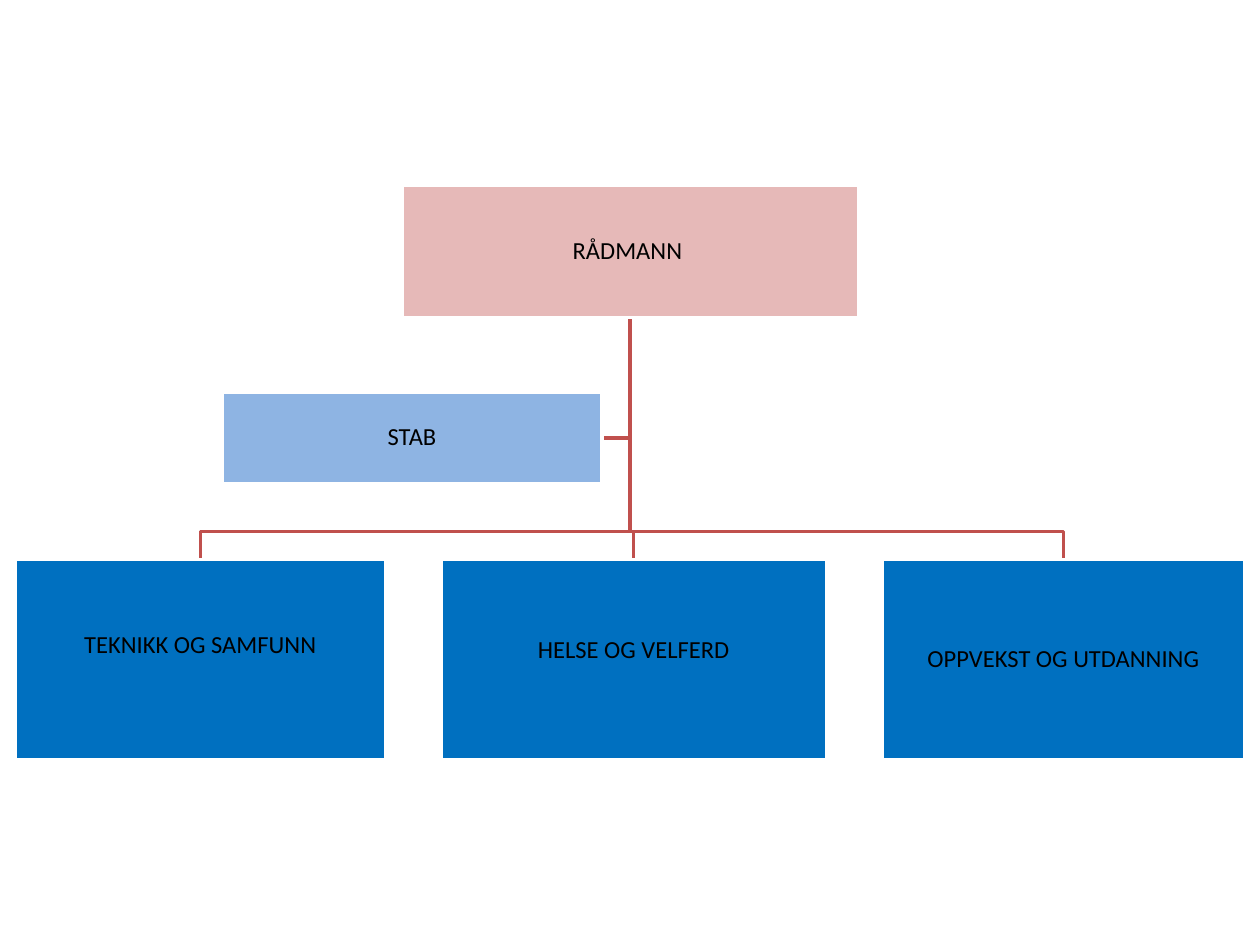
from pptx import Presentation
from pptx.dml.color import RGBColor as RGB
from pptx.enum.shapes import MSO_SHAPE as Shape
from pptx.enum.text import MSO_ANCHOR as Anchor, PP_ALIGN as Align
from pptx.util import Inches, Pt

WIDE, HIGH = Inches(10), Inches(7.5)
RED, WHITE, BLACK = "C0504D", "FFFFFF", "000000"
PINK, SKY, BLUE = "E6B9B8", "8EB4E3", "0070C0"
TRUNK, BUS = 50, 56.27
ROW, TALL = 59.2, 21.2


def col(share):
    return round(WIDE * share / 100)


def row(share):
    return round(HIGH * share / 100)


def tint(code):
    return RGB.from_string(code)


def edge(item, code):
    item.shadow.inherit = False
    item.line.color.rgb = tint(code)
    item.line.width = Pt(2)


def write(frame, text, size=14, font="Calibri", color=BLACK, right=0.01, low=0.01):
    frame.word_wrap = True
    frame.vertical_anchor = Anchor.MIDDLE
    frame.margin_left = frame.margin_top = Inches(0.01)
    frame.margin_right, frame.margin_bottom = Inches(right), Inches(low)
    para = frame.paragraphs[0]
    para.alignment = Align.CENTER
    para.line_spacing = 0.9
    run = para.add_run()
    run.text = text
    run.font.size = Pt(size)
    run.font.name = font
    run.font.color.rgb = tint(color)


def box(slide, text, left, top, wide, high, fill, **form):
    item = slide.shapes.add_shape(
        Shape.RECTANGLE, col(left), row(top), col(wide), row(high))
    item.fill.solid()
    item.fill.fore_color.rgb = tint(fill)
    edge(item, WHITE)
    write(item.text_frame, text, **form)


def link(slide, *spots):
    first, *rest = [(col(x), row(y)) for x, y in spots]
    pen = slide.shapes.build_freeform(*first)
    pen.add_line_segments(rest, close=False)
    item = pen.convert_to_shape()
    item.fill.background()
    edge(item, RED)


def main():
    deck = Presentation()
    deck.slide_width, deck.slide_height = WIDE, HIGH
    slide = deck.slides.add_slide(deck.slide_layouts[6])

    units = [
        ("TEKNIKK OG SAMFUNN", 1.2, 29.4, 0.24),
        ("HELSE OG VELFERD", 35, 30.6, 0.16),
        ("OPPVEKST OG UTDANNING", 70, 28.8, 0.01),
    ]
    start = (TRUNK, 33.6)
    link(slide, start, (TRUNK, 46.33), (47.8, 46.33))
    for _, left, wide, _ in units:
        mid = left + wide / 2
        link(slide, start, (TRUNK, BUS), (mid, BUS), (mid, ROW))

    box(slide, "RÅDMANN", 31.9, 19.6, 36.3, 14, PINK, right=0.06)
    box(slide, "STAB", 17.6, 41.47, 30.2, 9.73, SKY)
    for text, left, wide, low in units:
        box(slide, text, left, ROW, wide, TALL, BLUE, low=low)

    deck.save("out.pptx")


if __name__ == "__main__":
    main()
